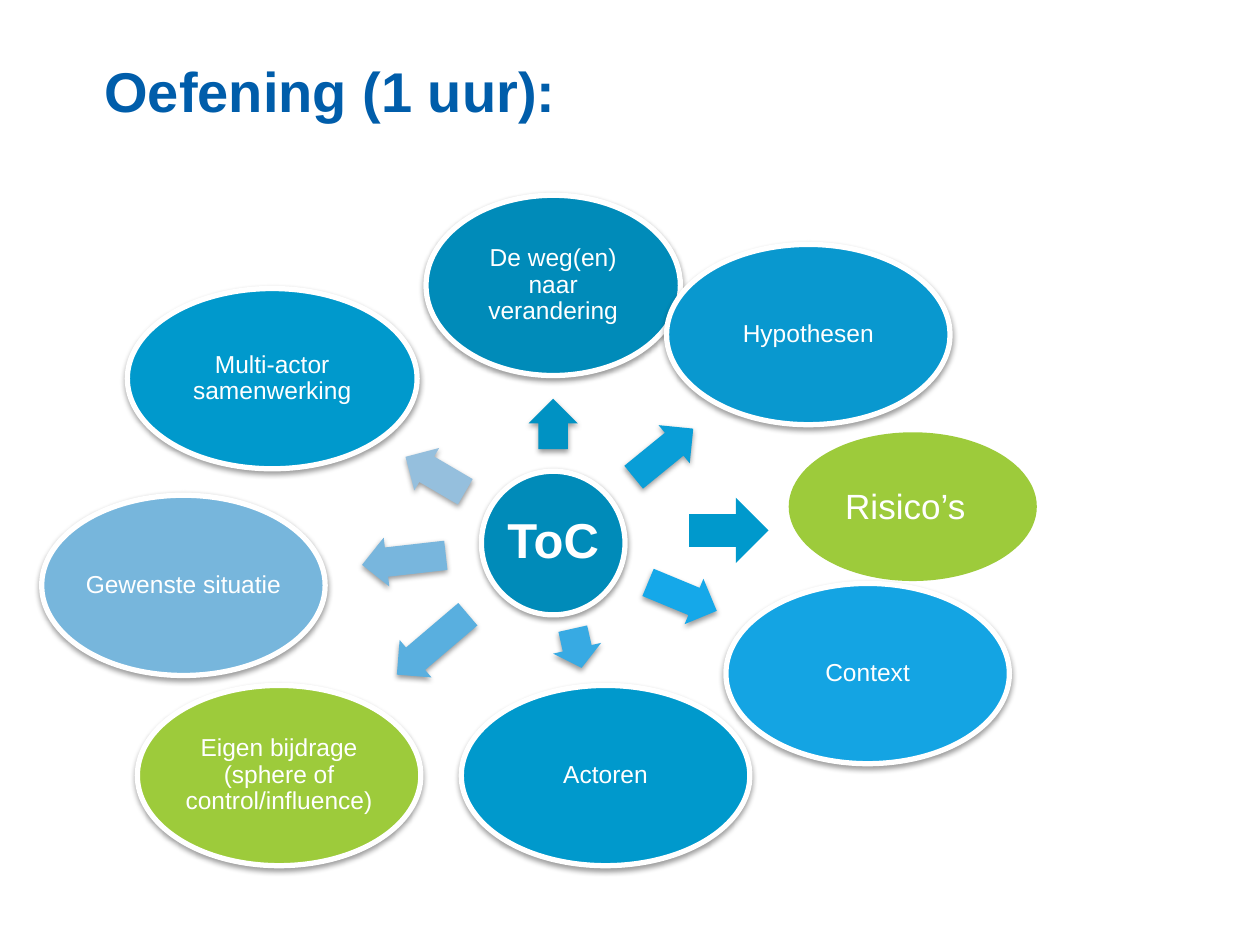
from lxml.etree import SubElement
from pptx import Presentation
from pptx.dml.color import RGBColor
from pptx.enum.shapes import MSO_SHAPE as SHAPE
from pptx.enum.text import MSO_ANCHOR as ANCHOR, PP_ALIGN as ALIGN
from pptx.oxml.ns import qn
from pptx.util import Pt

COLORS = {
    "title": "005DAA", "white": "FFFFFF", "shadow": "000000",
    "deep": "008BB9", "blue": "0099CC", "green": "9DCB3B",
    "hypotheses": "0998CF", "context": "14A4E3", "desired": "77B6DC",
    "arrow_path": "0092C3", "arrow_hypotheses": "099ED7",
    "arrow_context": "15A8E9", "arrow_actors": "37AAE3",
    "arrow_own": "59AFDF", "arrow_desired": "78B6DD",
    "arrow_multi": "95BFDD",
}
BUBBLE_H = 103
BUBBLE_INSET = 1
ARROW_H = 28.1

# Bubble: text, left, top, width, colour; arrow: left, top, length, angle, colour
SPOKES = [
    (("De weg(en) naar verandering", 219.6, 0, 145.4, "deep"),
     (277.9, 116.6, 28.8, 270, "arrow_path")),
    (("Hypothesen", 357.1, 28.1, 162, "hypotheses"),
     (333.4, 133.2, 43.9, 320.8, "arrow_hypotheses")),
    (("Context", 391, 221.8, 162, "context"),
     (344.9, 215.3, 42.5, 22.5, "arrow_context")),
    (("Actoren", 239.8, 280.1, 164.9, "blue"),
     (294.5, 244.8, 23, 77.4, "arrow_actors")),
    (("Eigen bijdrage (sphere of control/influence)", 54.7, 280.1, 162, "green"),
     (196.6, 242.6, 53.3, 139.6, "arrow_own")),
    (("Gewenste situatie", 0, 171.4, 162, "desired"),
     (182.9, 194.4, 48.2, 173.5, "arrow_desired")),
    (("Multi-actor samenwerking", 49, 53.3, 165.6, "blue"),
     (205.2, 145.4, 39.6, 210.3, "arrow_multi")),
]


def rgb(name):
    return RGBColor.from_string(COLORS[name])


def add_shape(slide, kind, left, top, width, height, color):
    sp = slide.shapes.add_shape(kind, Pt(left), Pt(top), Pt(width), Pt(height))
    sp.shadow.inherit = False
    sp.fill.solid()
    sp.fill.fore_color.rgb = rgb(color)
    sp.line.fill.background()
    return sp


def add_shadow(sp):
    effects = sp._element.spPr.find(qn("a:effectLst"))
    outer = SubElement(effects, qn("a:outerShdw"), blurRad=str(Pt(3.1)),
                       dist=str(Pt(1.6)), dir="5400000", rotWithShape="0")
    color = SubElement(outer, qn("a:srgbClr"), val=COLORS["shadow"])
    SubElement(color, qn("a:alpha"), val="38000")


def set_text(sp, text, size, color="white", bold=False, anchor=ANCHOR.TOP,
             align=ALIGN.LEFT, inset=None, spacing=None):
    tf = sp.text_frame
    tf.word_wrap = True
    tf.vertical_anchor = anchor
    if inset is not None:
        tf.margin_left = tf.margin_right = Pt(inset)
        tf.margin_top = tf.margin_bottom = Pt(inset)
    tf.text = text
    p = tf.paragraphs[0]
    p.alignment = align
    p.line_spacing = spacing
    font = p.runs[0].font
    font.name, font.size, font.bold = "Arial", Pt(size), bold
    font.color.rgb = rgb(color)


def add_bubble(slide, text, left, top, width, height, color, size=14,
               bold=False):
    sp = add_shape(slide, SHAPE.OVAL, left, top, width, height, color)
    sp.line.color.rgb = rgb("white")
    sp.line.width = Pt(3)
    add_shadow(sp)
    set_text(sp, text, size, bold=bold, anchor=ANCHOR.MIDDLE,
             align=ALIGN.CENTER, inset=BUBBLE_INSET, spacing=0.9)


def add_arrow(slide, left, top, length, angle, color):
    sp = add_shape(slide, SHAPE.RIGHT_ARROW, left, top, length, ARROW_H, color)
    sp.adjustments[0] = 0.6
    sp.rotation = angle
    add_shadow(sp)


def add_title(slide, left, top, width, height):
    box = slide.shapes.add_textbox(Pt(left), Pt(top), Pt(width), Pt(height))
    set_text(box, "Oefening (1 uur):", 32, "title", bold=True,
             anchor=ANCHOR.BOTTOM)


def add_wheel(slide, left, top):
    """Hub with an arrow to each surrounding bubble."""
    add_bubble(slide, "ToC", left + 251.3, top + 157.7, 82.1, 82.1, "deep",
               size=28, bold=True)
    for (text, x, y, width, color), (ax, ay, length, angle, tint) in SPOKES:
        add_arrow(slide, left + ax, top + ay, length, angle, tint)
        add_bubble(slide, text, left + x, top + y, width, BUBBLE_H, color)


def add_risks(slide, left, top):
    """Flat bubble with its label and the arrow pointing to it."""
    add_shape(slide, SHAPE.OVAL, left + 56.9, top, 141.8, 85, "green")
    label = slide.shapes.add_textbox(Pt(left + 82.1), Pt(top + 26.6),
                                     Pt(96.5), Pt(31.7))
    set_text(label, "Risico’s", 20)
    add_shape(slide, SHAPE.RIGHT_ARROW, left, top + 37.4, 45.4, 37.4, "blue")


def main():
    prs = Presentation()
    prs.slide_width, prs.slide_height = Pt(720), Pt(540)
    slide = prs.slides.add_slide(prs.slide_layouts[6])
    add_title(slide, 52.6, 20.2, 540, 54)
    add_wheel(slide, 23.8, 111.6)
    add_risks(slide, 393.8, 247)
    prs.save("out.pptx")


if __name__ == "__main__":
    main()
